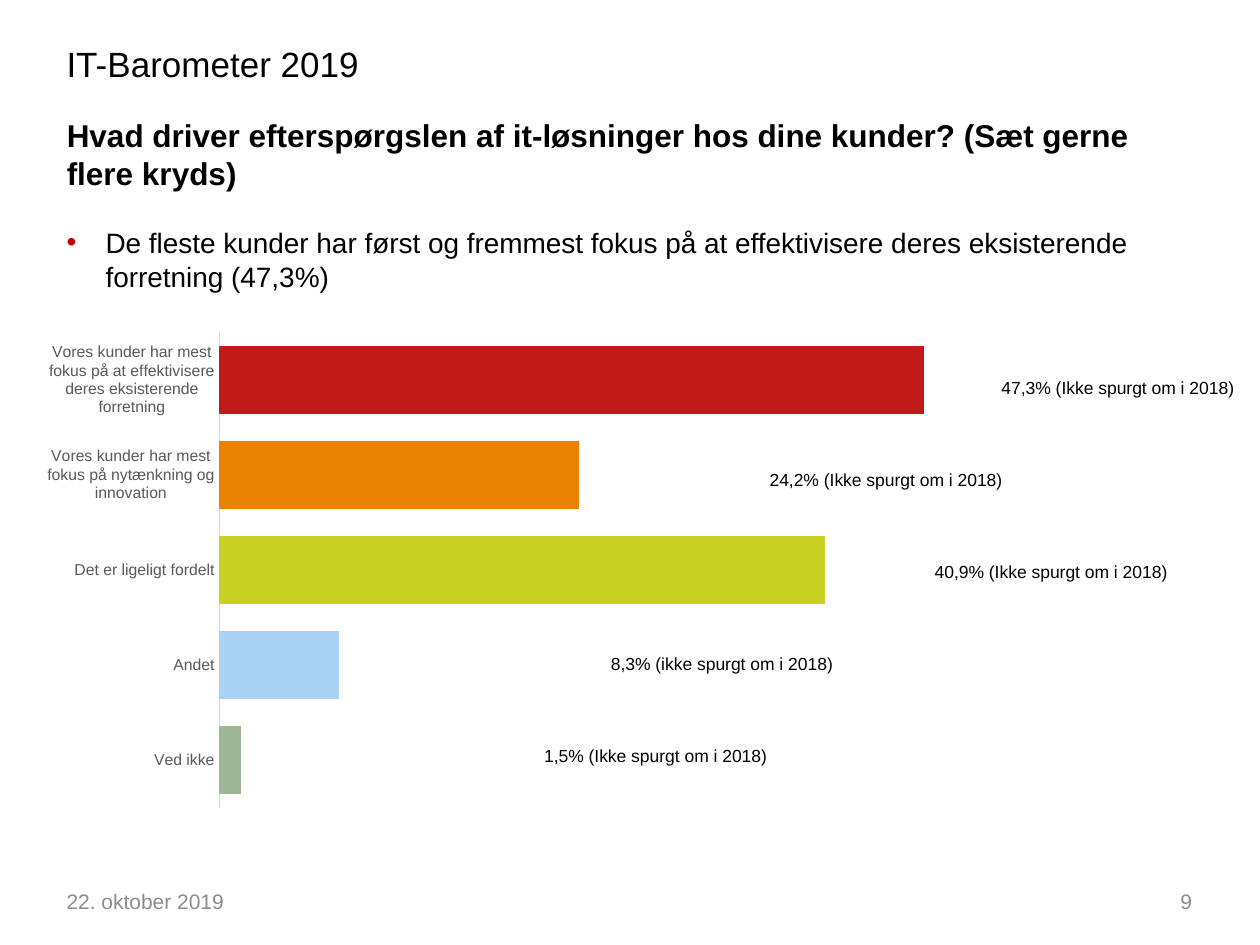
"""Build the IT-Barometer slide on what drives demand for IT solutions."""
from lxml.etree import SubElement
from pptx import Presentation
from pptx.chart.data import CategoryChartData
from pptx.dml.color import RGBColor
from pptx.enum.chart import XL_CHART_TYPE, XL_TICK_MARK
from pptx.enum.text import MSO_ANCHOR, PP_ALIGN
from pptx.oxml.ns import qn
from pptx.util import Inches, Pt

HUES = {"ink": "000000", "foot": "8C8C8C", "axis": "595959", "rule": "D9D9D9",
        "dot": "C00000", "red": "C21919", "orange": "E98300",
        "lime": "C8D124", "sky": "AAD2F5", "sage": "9EB696"}
FONT = "Arial"
TITLE = "Hvad driver efterspørgslen af it-løsninger hos dine kunder? (Sæt gerne flere kryds)"
POINT = ("De fleste kunder har først og fremmest fokus på at effektivisere "
         "deres eksisterende forretning (47,3%)")
BARS = [
    ("Ved ikke", 3, "sage"),
    ("Andet", 17, "sky"),
    ("Det er ligeligt fordelt", 86, "lime"),
    ("Vores kunder har mest fokus på nytænkning og innovation", 51, "orange"),
    ("Vores kunder har mest fokus på at effektivisere deres eksisterende forretning",
     100, "red"),
]
NOTES = [
    (7.85, "47,3% (Ikke spurgt om i 2018)"),
    (6.01, "24,2% (Ikke spurgt om i 2018)"),
    (7.32, "40,9% (Ikke spurgt om i 2018)"),
    (4.75, "8,3% (ikke spurgt om i 2018)"),
    (4.22, "1,5% (Ikke spurgt om i 2018)"),
]
NOTE_TOP, NOTE_STEP = 2.94, 0.73
PLOT = {"x": 0.176, "y": 0.02, "w": 0.766, "h": 0.96}


def tint(name):
    return RGBColor.from_string(HUES[name])


def style(font, size, hue="ink", bold=False):
    font.name, font.size, font.bold = FONT, Pt(size), bold
    font.color.rgb = tint(hue)


def write(shape, box, text, size, hue="ink", bold=False, align=PP_ALIGN.LEFT,
          anchor=MSO_ANCHOR.TOP, bullet=False):
    shape.left, shape.top, shape.width, shape.height = map(Inches, box)
    frame = shape.text_frame
    frame.text, frame.word_wrap, frame.vertical_anchor = text, True, anchor
    para = frame.paragraphs[0]
    para.alignment = align
    if bullet:
        props = para._p.get_or_add_pPr()
        props.set("marL", str(Inches(0.31)))
        props.set("indent", str(-Inches(0.31)))
        color = SubElement(props, qn("a:buClr"))
        SubElement(color, qn("a:srgbClr"), val=HUES["dot"])
        SubElement(props, qn("a:buFont"), typeface=FONT)
        SubElement(props, qn("a:buChar"), char="•")
    style(para.font, size, hue, bold)


def add_text(slide, box, text, size, **look):
    write(slide.shapes.add_textbox(*map(Inches, box)), box, text, size, **look)


def add_bars(slide):
    data = CategoryChartData()
    data.categories = [name for name, _, _ in BARS]
    data.add_series("Series 1", [value for _, value, _ in BARS])
    box = map(Inches, (0.2, 2.56, 8.76, 3.93))
    chart = slide.shapes.add_chart(XL_CHART_TYPE.BAR_CLUSTERED, *box, data).chart
    chart.has_legend = chart.has_title = False
    style(chart.font, 10)
    cats, vals = chart.category_axis, chart.value_axis
    cats.major_tick_mark = cats.minor_tick_mark = XL_TICK_MARK.NONE
    style(cats.tick_labels.font, 9, "axis")
    cats.format.line.color.rgb = tint("rule")
    cats.format.line.width = Pt(0.75)
    vals.visible = vals.has_major_gridlines = False
    vals.minimum_scale, vals.maximum_scale = 0, 120
    vals.tick_labels.number_format = "0.00%"
    vals.tick_labels.number_format_is_linked = False
    plot = chart.plots[0]
    plot.gap_width, plot.overlap, plot.vary_by_categories = 40, -25, False
    series = plot.series[0]
    series.format.fill.solid()
    series.format.fill.fore_color.rgb = tint("red")
    for at, (_, _, hue) in enumerate(BARS):
        fill = series.points[at].format.fill
        fill.solid()
        fill.fore_color.rgb = tint(hue)
    area = chart._chartSpace.chart.plotArea
    layout = area.find(qn("c:layout"))
    if layout is None:
        layout = SubElement(area, qn("c:layout"))
        area.insert(0, layout)
    manual = SubElement(layout, qn("c:manualLayout"))
    SubElement(manual, qn("c:layoutTarget"), val="inner")
    for side in "xy":
        SubElement(manual, qn(f"c:{side}Mode"), val="edge")
    for side, share in PLOT.items():
        SubElement(manual, qn(f"c:{side}"), val=str(share))


def main():
    deck = Presentation()
    deck.slide_width, deck.slide_height = Inches(10), Inches(7.5)
    slide = deck.slides.add_slide(deck.slide_layouts[5])
    add_text(slide, (0.43, 0.29, 3.17, 0.4), "IT-Barometer 2019", 20)
    write(slide.shapes.title, (0.43, 0.87, 9, 0.55), TITLE, 18, bold=True)
    add_text(slide, (0.43, 1.74, 9.24, 0.79), POINT, 16, bullet=True)
    add_bars(slide)
    for row, (left, text) in enumerate(NOTES):
        add_text(slide, (left, NOTE_TOP + row * NOTE_STEP, 2.1, 0.27), text, 10)
    foot = {"hue": "foot", "anchor": MSO_ANCHOR.MIDDLE}
    add_text(slide, (0.43, 6.95, 2.33, 0.4), "22. oktober 2019", 12, **foot)
    add_text(slide, (7.23, 6.95, 2.33, 0.4), "9", 12, align=PP_ALIGN.RIGHT, **foot)
    deck.save("out.pptx")


if __name__ == "__main__":
    main()
